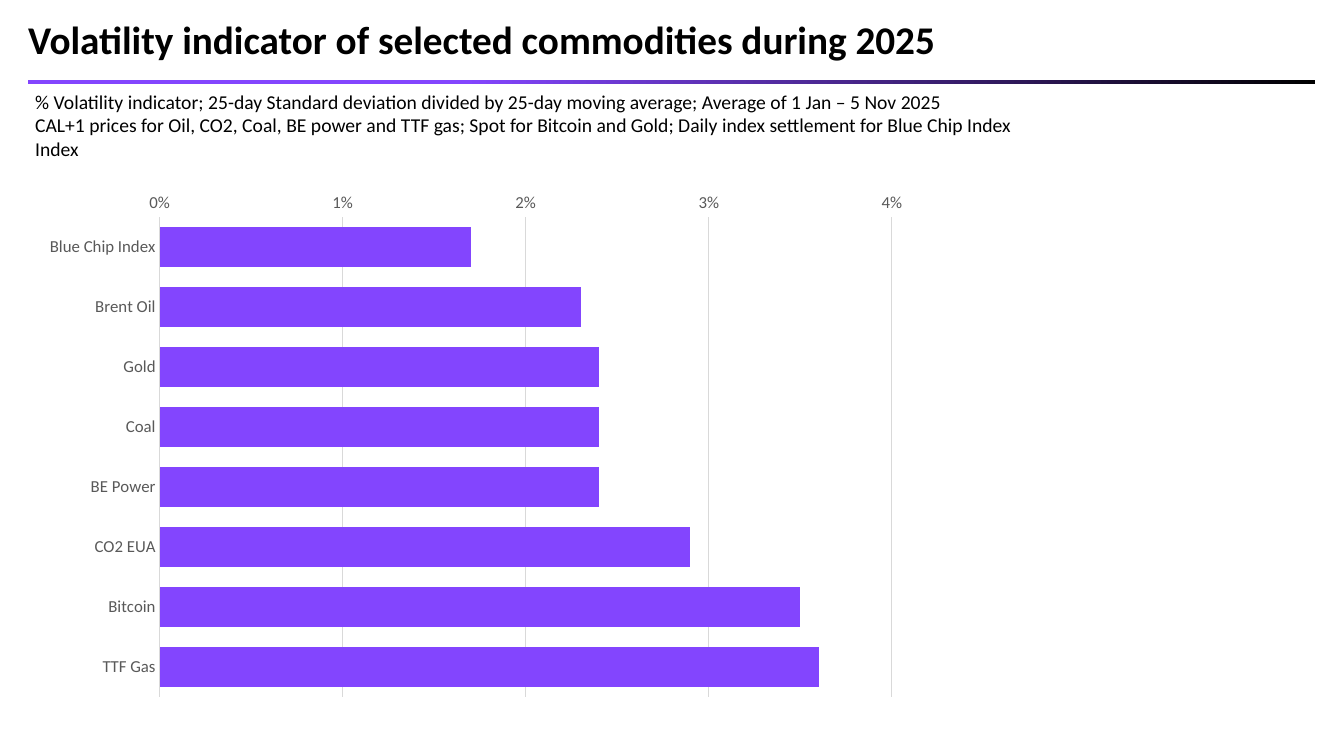
import pptx
import pptx.chart.data
import pptx.dml.color
import pptx.enum.chart
import pptx.enum.shapes
import pptx.enum.text
import pptx.oxml
import pptx.util

PX = 9144  # 100 px to the inch
FONT = "Calibri"
PURPLE, BLACK, GREY, PALE = "8345FE", "000000", "595959", "D9D9D9"

SUBTITLE = [
    "% Volatility indicator; 25-day Standard deviation divided by 25-day moving average; "
    "Average of 1 Jan – 5 Nov 2025",
    "CAL+1 prices for Oil, CO2, Coal, BE power and TTF gas; Spot for Bitcoin and Gold; "
    "Daily index settlement for Blue Chip Index",
    "Index",
]
VOLATILITY = {
    "Blue Chip Index": 0.017,
    "Brent Oil": 0.023,
    "Gold": 0.024,
    "Coal": 0.024,
    "BE Power": 0.024,
    "CO2 EUA": 0.029,
    "Bitcoin": 0.035,
    "TTF Gas": 0.036,
}


def emu(box):
    return [pptx.util.Emu(v * PX) for v in box]


def rgb(value):
    return pptx.dml.color.RGBColor.from_string(value)


def style_font(font, size, color, bold=False):
    font.name = FONT
    font.size = pptx.util.Pt(size)
    font.bold = bold
    font.color.rgb = rgb(color)


def write(p, text, size=14, color=BLACK, bold=False):
    r = p.add_run()
    r.text = text
    style_font(r.font, size, color, bold)


def add_title(s, box, text):
    sp = s.shapes.title
    sp.left, sp.top, sp.width, sp.height = emu(box)
    tf = sp.text_frame
    tf.auto_size = pptx.enum.text.MSO_AUTO_SIZE.NONE
    tf.vertical_anchor = pptx.enum.text.MSO_ANCHOR.MIDDLE
    tf.margin_left, tf.margin_top, tf.margin_right, tf.margin_bottom = emu((10, 4, 10, 0))
    p = tf.paragraphs[0]
    p.alignment = pptx.enum.text.PP_ALIGN.LEFT
    p.line_spacing = 0.8
    write(p, text, size=28, bold=True)


def add_rule(s, box):
    sp = s.shapes.add_shape(pptx.enum.shapes.MSO_SHAPE.RECTANGLE, *emu(box))
    sp.shadow.inherit = False
    sp.line.fill.background()
    sp.fill.gradient()
    sp.fill.gradient_angle = 0
    for stop, position, color in zip(sp.fill.gradient_stops, (0.34, 1), (PURPLE, BLACK)):
        stop.position = position
        stop.color.rgb = rgb(color)


def add_subtitle(s, box, lines):
    tf = s.shapes.add_textbox(*emu(box)).text_frame
    tf.word_wrap = False
    tf.auto_size = pptx.enum.text.MSO_AUTO_SIZE.SHAPE_TO_FIT_TEXT
    for i, line in enumerate(lines):
        p = tf.add_paragraph() if i else tf.paragraphs[0]
        write(p, line)


def set_plot_layout(chart, x, y, w, h):
    """Fix the inner plot area, in fractions of the chart."""
    plot_area = chart._chartSpace.chart.plotArea
    for old in plot_area.xpath("c:layout"):
        plot_area.remove(old)
    parts = "".join(f'<c:{k} val="{v}"/>' for k, v in
                    (("xMode", "edge"), ("yMode", "edge"), ("x", x), ("y", y), ("w", w), ("h", h)))
    plot_area.insert(0, pptx.oxml.parse_xml(
        '<c:layout xmlns:c="http://schemas.openxmlformats.org/drawingml/2006/chart">'
        f'<c:manualLayout><c:layoutTarget val="inner"/>{parts}</c:manualLayout></c:layout>'))


def style_line(line, color):
    line.color.rgb = rgb(color)
    line.width = pptx.util.Pt(0.75)


def add_volatility_chart(s, box, values):
    data = pptx.chart.data.CategoryChartData(number_format="0%")
    data.categories = list(values)
    data.add_series("Series 1", list(values.values()))
    kind = pptx.enum.chart.XL_CHART_TYPE.BAR_CLUSTERED
    chart = s.shapes.add_chart(kind, *emu(box), data).chart
    chart.has_legend = False
    chart.has_title = False
    style_font(chart.font, 10, BLACK)
    set_plot_layout(chart, 0.15, 0.066, 0.817, 0.914)

    plot = chart.plots[0]
    plot.gap_width = 50
    plot.vary_by_categories = False
    fill = plot.series[0].format.fill
    fill.solid()
    fill.fore_color.rgb = rgb(PURPLE)

    cats, vals = chart.category_axis, chart.value_axis
    for axis in (cats, vals):
        axis.major_tick_mark = axis.minor_tick_mark = pptx.enum.chart.XL_TICK_MARK.NONE
        style_font(axis.tick_labels.font, 12, GREY)
    cats.reverse_order = True
    cats.has_major_gridlines = False
    style_line(cats.format.line, PALE)

    vals.minimum_scale, vals.maximum_scale, vals.major_unit = 0, 0.04, 0.01
    vals.tick_labels.number_format = "0%"
    vals.tick_labels.number_format_is_linked = False
    vals.format.line.fill.background()
    vals.has_major_gridlines = True
    style_line(vals.major_gridlines.format.line, PALE)


def main():
    prs = pptx.Presentation()
    prs.slide_width, prs.slide_height = emu((1333, 750))
    s = prs.slides.add_slide(prs.slide_layouts[5])
    add_rule(s, (28, 79, 1276, 4))
    add_title(s, (18, 2, 986, 78), "Volatility indicator of selected commodities during 2025")
    add_subtitle(s, (25, 84, 1008, 81), SUBTITLE)
    add_volatility_chart(s, (25, 181, 889, 521), VOLATILITY)
    prs.save("out.pptx")


if __name__ == "__main__":
    main()
